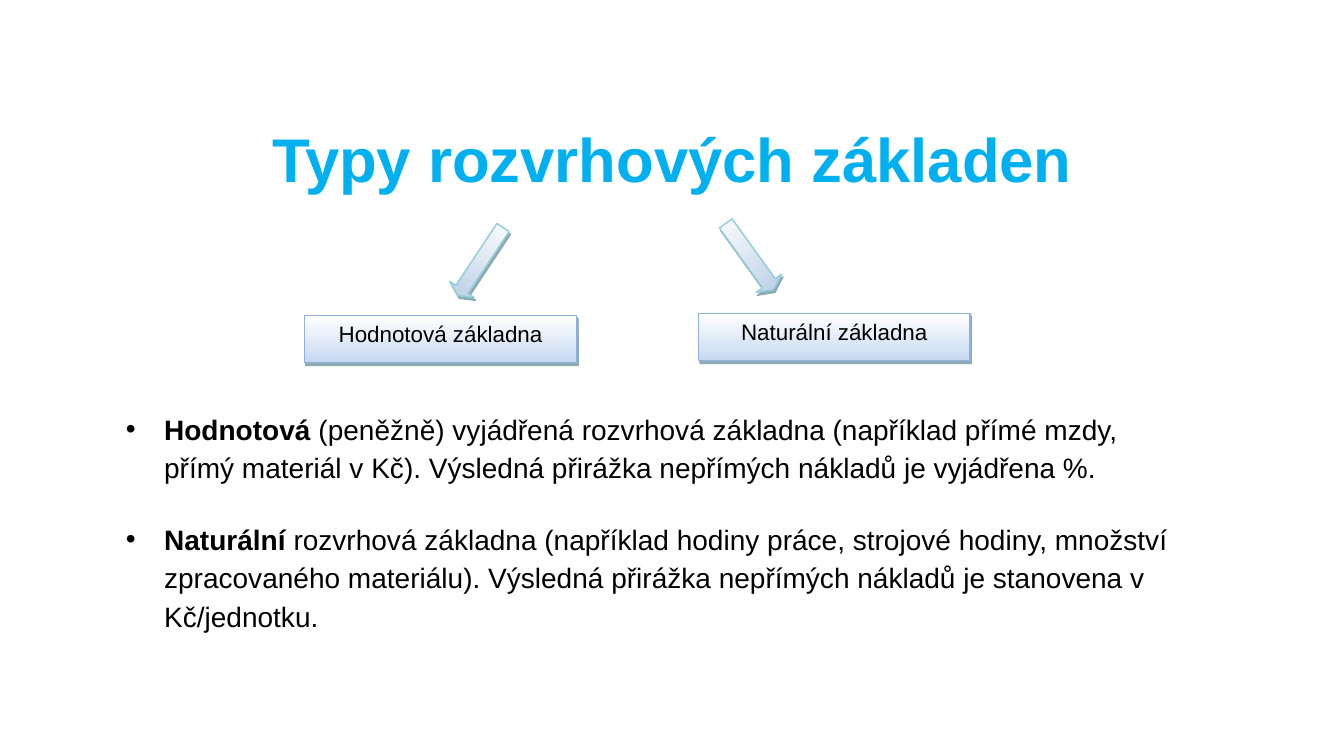
from pptx import Presentation
from pptx.dml.color import RGBColor
from pptx.enum.shapes import MSO_SHAPE as Shape
from pptx.enum.text import MSO_ANCHOR as Anchor, PP_ALIGN as Align
from pptx.oxml import parse_xml
from pptx.oxml.ns import nsdecls, qn
from pptx.util import Inches, Pt

SKY = RGBColor(0x00, 0xB0, 0xF0)
BLACK = RGBColor(0x00, 0x00, 0x00)
WHITE = RGBColor(0xFF, 0xFF, 0xFF)
BOX_FILL = RGBColor(0xC6, 0xD9, 0xF1)
BOX_LINE = RGBColor(0x8D, 0xB3, 0xE2)
ARROW_FILL = RGBColor(0xB8, 0xCC, 0xE4)
ARROW_LINE = RGBColor(0x92, 0xCD, 0xDC)
SHADE = RGBColor(0x20, 0x58, 0x67)


def style(font, size, color, bold=False):
    font.name = "Arial"
    font.size = Pt(size)
    font.bold = bold
    font.color.rgb = color


def add_shaded(kind, place, end, edge):
    """Add a shape with a vertical gradient, a thin edge and a hard shadow."""
    shape = slide.shapes.add_shape(kind, *map(Inches, place))
    shape.fill.gradient()
    shape.fill.gradient_angle = 270
    for stop, color in zip(shape.fill.gradient_stops, (WHITE, end)):
        stop.position = 0 if color == WHITE else 1
        stop.color.rgb = color
    shape.line.color.rgb = edge
    shape.line.width = Pt(1)
    shape.shadow.inherit = False
    shape.element.spPr.find(qn("a:effectLst")).append(parse_xml(
        f'<a:outerShdw {nsdecls("a")} blurRad="0" dist="{Pt(2.2)}" '
        f'dir="{63 * 60000}" algn="ctr" rotWithShape="0">'
        f'<a:srgbClr val="{SHADE}"><a:alpha val="50000"/></a:srgbClr>'
        '</a:outerShdw>'))
    return shape


prs = Presentation()
prs.slide_width = Inches(13.33)
prs.slide_height = Inches(7.5)
slide = prs.slides.add_slide(prs.slide_layouts[6])

# Title
title = slide.shapes.add_textbox(
    Inches(0.92), Inches(0.89), Inches(11.5), Inches(1.45))
frame = title.text_frame
frame.word_wrap = True
frame.vertical_anchor = Anchor.MIDDLE
frame.text = "Typy rozvrhových základen"
para = frame.paragraphs[0]
para.alignment = Align.CENTER
para.line_spacing = 0.9
style(para.runs[0].font, 44, SKY, True)

# Labelled boxes
for label, place in (
    ("Hodnotová základna", (3.02, 3.13, 2.7, 0.47)),
    ("Naturální základna", (6.93, 3.11, 2.69, 0.47)),
):
    box = add_shaded(Shape.RECTANGLE, place, BOX_FILL, BOX_LINE)
    frame = box.text_frame
    frame.word_wrap = True
    frame.vertical_anchor = Anchor.TOP
    frame.text = label
    para = frame.paragraphs[0]
    para.alignment = Align.CENTER
    style(para.runs[0].font, 16, BLACK)

# Arrows from the title to the boxes
for place, turn in (
    ((4.62, 2.19, 0.29, 0.81), 33.6),
    ((7.28, 2.14, 0.31, 0.81), 324.2),
):
    arrow = add_shaded(Shape.DOWN_ARROW, place, ARROW_FILL, ARROW_LINE)
    arrow.adjustments[0] = 0.5
    arrow.adjustments[1] = 0.25
    arrow.rotation = turn

# Bulleted definitions
for place, term, rest in (
    ((1.15, 3.99, 10.33, 0.84), "Hodnotová",
     " (peněžně) vyjádřená rozvrhová základna (například přímé mzdy, "
     "přímý materiál v Kč). Výsledná přirážka nepřímých nákladů "
     "je vyjádřena %."),
    ((1.15, 5.08, 11.5, 1.23), "Naturální",
     " rozvrhová základna (například hodiny práce, strojové hodiny, "
     "množství zpracovaného materiálu). Výsledná přirážka nepřímých "
     "nákladů je stanovena v Kč/jednotku."),
):
    note = slide.shapes.add_textbox(*map(Inches, place))
    frame = note.text_frame
    frame.word_wrap = True
    para = frame.paragraphs[0]
    props = para._p.get_or_add_pPr()
    props.set("marL", str(Inches(0.38)))
    props.set("indent", str(-Inches(0.38)))
    props.append(parse_xml(f'<a:buFont {nsdecls("a")} typeface="Arial"/>'))
    props.append(parse_xml(f'<a:buChar {nsdecls("a")} char="•"/>'))
    para.line_spacing = 1.15
    para.space_after = Pt(10)
    for text, bold in ((term, True), (rest, False)):
        run = para.add_run()
        run.text = text
        style(run.font, 20, BLACK, bold)

prs.save("out.pptx")
